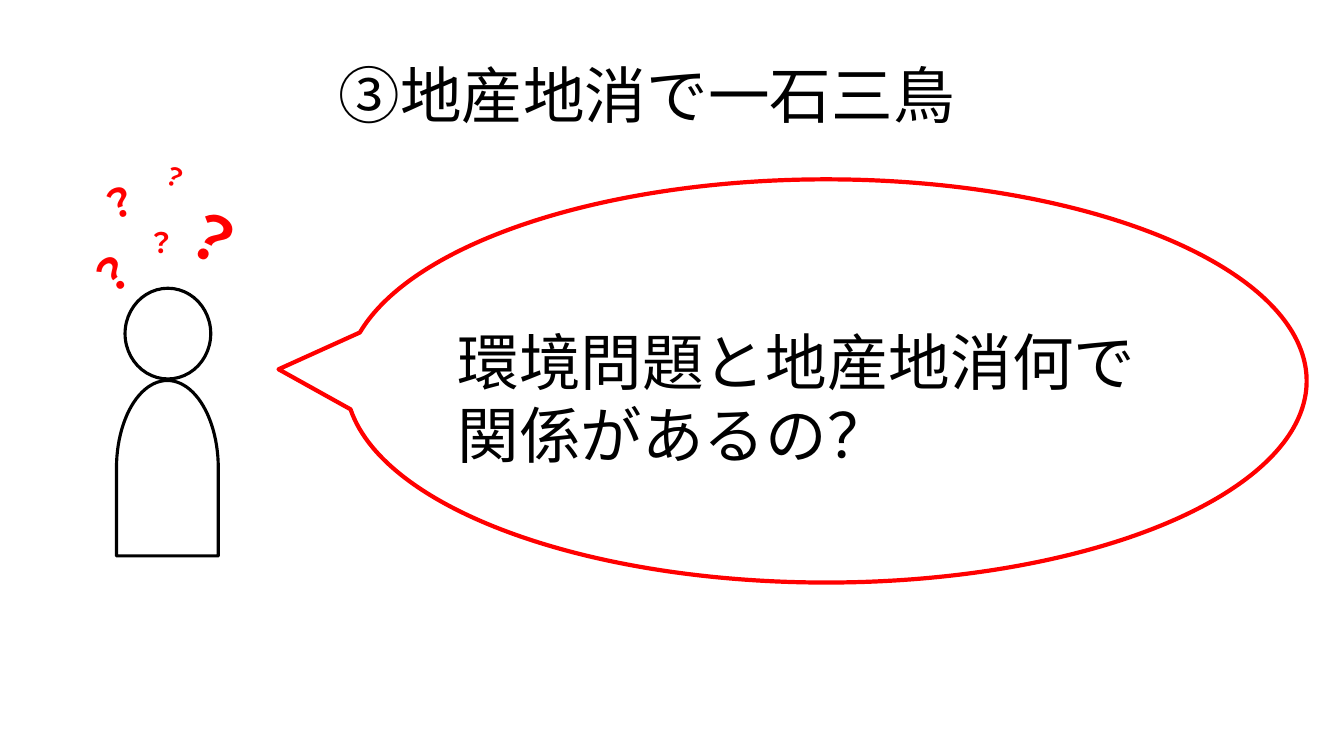
from dataclasses import dataclass
from typing import NamedTuple

from lxml import etree
from pptx import Presentation
from pptx.dml.color import RGBColor
from pptx.enum.shapes import MSO_SHAPE as Shape
from pptx.enum.text import MSO_AUTO_SIZE as AutoSize
from pptx.oxml.ns import qn
from pptx.util import Inches, Pt


@dataclass(frozen=True)
class Theme:
    font: str = "Noto Sans CJK JP"
    ink: RGBColor = RGBColor(0, 0, 0)
    paper: RGBColor = RGBColor(255, 255, 255)
    accent: RGBColor = RGBColor(255, 0, 0)
    body_size: float = 44
    figure_line: float = 2.25
    bubble_line: float = 3


class Box(NamedTuple):
    """A region in inches."""
    left: float
    top: float
    width: float
    height: float

    def inner(self, left, top, width, height):
        return Box(self.left + left, self.top + top, width, height)

    def lengths(self):
        return [Inches(value) for value in self]


THEME = Theme()
MARGIN = 0.1

# left, top, width, height within the figure, turn, type size, indent
QUESTION_MARKS = [
    (0, 0.42, 1.94, 0.64, -37.5, 32, 0),
    (0.72, 0.4, 1.57, 1.14, 26.3, 44, 0.25),
    (0.7, 0.61, 0.72, 0.44, 0, 20, 0),
    (0.23, 0.11, 0.76, 0.57, -20.3, 28, 0),
    (0.85, 0, 0.57, 0.4, 20.9, 18, 0),
]


def add_text(page, box, text, size=THEME.body_size, color=THEME.ink,
             bold=False, turn=0, indent=0):
    holder = page.shapes.add_textbox(*box.lengths())
    holder.rotation = turn
    frame = holder.text_frame
    frame.word_wrap = True
    frame.auto_size = AutoSize.SHAPE_TO_FIT_TEXT
    frame.margin_left = Inches(MARGIN + indent)
    span = frame.paragraphs[0].add_run()
    span.text = text
    font = span.font
    font.name, font.size, font.bold = THEME.font, Pt(size), bold
    font.color.rgb = color
    east_asian = etree.SubElement(span._r.get_or_add_rPr(), qn("a:ea"))
    east_asian.set("typeface", THEME.font)


def add_outline(page, kind, box, color, weight, filled=True):
    shape = page.shapes.add_shape(kind, *box.lengths())
    shape.shadow.inherit = False
    if filled:
        shape.fill.solid()
        shape.fill.fore_color.rgb = THEME.paper
    else:
        shape.fill.background()
    shape.line.color.rgb = color
    shape.line.width = Pt(weight)
    return shape


def add_bubble(page, box):
    bubble = add_outline(page, Shape.OVAL_CALLOUT, box, THEME.accent,
                         THEME.bubble_line, filled=False)
    bubble.adjustments[0] = -0.57
    bubble.adjustments[1] = -0.029
    add_text(page, box.inner(1.01, 1.38, 7.06, 1.58),
             "環境問題と地産地消何で関係があるの？")


def add_puzzled_person(page, box):
    body = add_outline(page, Shape.FLOWCHART_DELAY,
                       box.inner(0.13, 2.56, 1.74, 1.01),
                       THEME.ink, THEME.figure_line)
    body.rotation = 270
    add_outline(page, Shape.OVAL, box.inner(0.58, 1.28, 0.85, 0.9),
                THEME.ink, THEME.figure_line)
    for *place, turn, size, indent in QUESTION_MARKS:
        add_text(page, box.inner(*place), "？", size, THEME.accent,
                 bold=True, turn=turn, indent=indent)


def main():
    deck = Presentation()
    deck.slide_width, deck.slide_height = Inches(13.33), Inches(7.5)
    page = deck.slides.add_slide(deck.slide_layouts[6])
    add_text(page, Box(3.26, 0.52, 9.47, 0.84), "③地産地消で一石三鳥")
    add_bubble(page, Box(3.43, 1.78, 9.53, 4))
    add_puzzled_person(page, Box(0.66, 1.58, 2.29, 3.94))
    deck.save("out.pptx")


if __name__ == "__main__":
    main()
